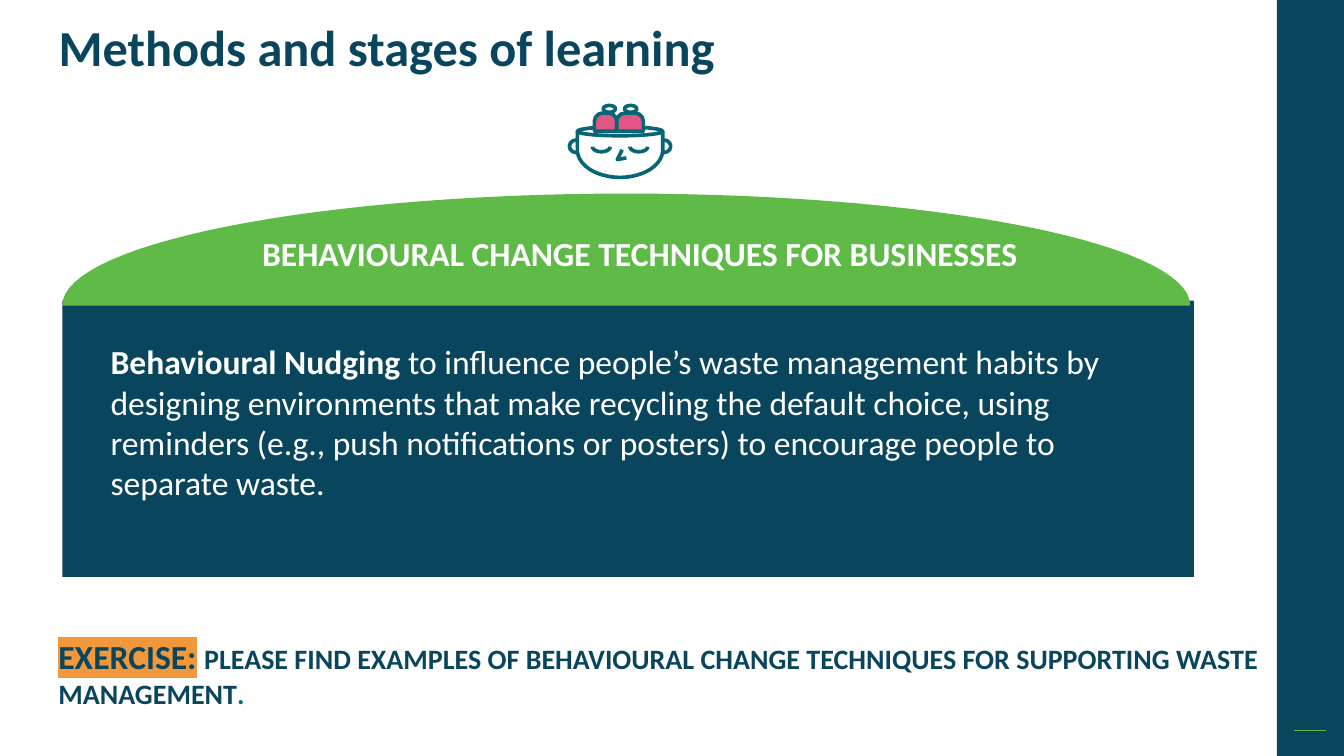
import math

from lxml import etree
from pptx import Presentation
from pptx.dml.color import RGBColor
from pptx.enum import shapes, text
from pptx.oxml import ns
from pptx.util import Pt

COLORS = {"navy": "09465E", "green": "60BA47", "white": "FFFFFF", "pink": "E25684",
          "teal": "086575", "orange": "F1983D", "stop": "086D6E"}
FONT = "Calibri"
SHAPE = shapes.MSO_SHAPE


def rgb(name):
    return RGBColor.from_string(COLORS[name])


def paint(sp, fill=None, line=None, width=2.6):
    sp.shadow.inherit = False
    if fill:
        sp.fill.solid()
        sp.fill.fore_color.rgb = rgb(fill)
    else:
        sp.fill.background()
    if line:
        sp.line.color.rgb = rgb(line)
        sp.line.width = Pt(width)
    else:
        sp.line.fill.background()
    return sp


def add_preset(s, kind, box, fill=None, line=None):
    return paint(s.shapes.add_shape(kind, *map(Pt, box)), fill, line)


def add_outline(s, points, fill=None, line=None, close=True):
    points = [(Pt(x), Pt(y)) for x, y in points]
    builder = s.shapes.build_freeform(*points[0])
    builder.add_line_segments(points[1:], close=close)
    return paint(builder.convert_to_shape(), fill, line)


def half_ellipse(cx, cy, rx, ry, steps=60):
    """Points from left to right; a positive ry bulges upwards."""
    angles = [math.pi * (1 - i / steps) for i in range(steps + 1)]
    return [(cx + rx * math.cos(a), cy - ry * math.sin(a)) for a in angles]


def add_run(p, words, size, color, bold=True):
    r = p.add_run()
    r.text = words
    r.font.size, r.font.bold, r.font.name = Pt(size), bold, FONT
    r.font.color.rgb = rgb(color)
    return r


def highlight(r, color):
    fill = r.font._element.find(ns.qn("a:solidFill"))
    mark = etree.Element(ns.qn("a:highlight"))
    etree.SubElement(mark, ns.qn("a:srgbClr"), val=COLORS[color])
    fill.addnext(mark)


def add_text(s, box):
    tf = s.shapes.add_textbox(*map(Pt, box)).text_frame
    tf.word_wrap = True
    return tf.paragraphs[0]


def add_sidebar(s, box):
    x, y, w, h = box
    add_preset(s, SHAPE.RECTANGLE, box, "navy")
    rule_y = Pt(y + h - 18)
    rule = s.shapes.add_connector(shapes.MSO_CONNECTOR.STRAIGHT,
                                  Pt(x + 12.5), rule_y, Pt(x + w - 12.5), rule_y)
    rule.line.color.rgb = rgb("green")
    rule.line.width = Pt(1)
    etree.SubElement(rule._element.spPr, ns.qn("a:effectLst"))


def add_title(s, box):
    sp = s.shapes.title
    sp.left, sp.top, sp.width, sp.height = map(Pt, box)
    tf = sp.text_frame
    tf.word_wrap = True
    tf.auto_size = text.MSO_AUTO_SIZE.NONE
    tf.vertical_anchor = text.MSO_ANCHOR.TOP
    p = tf.paragraphs[0]
    p.alignment = text.PP_ALIGN.LEFT
    p.line_spacing = 0.9
    p.space_before = Pt(0)
    add_run(p, "Methods and stages of learning", 36, "navy")


def add_technique_panel(s, box):
    x, y, w, h = box
    dome_h, seam = 80, 80 - 3.5
    add_preset(s, SHAPE.RECTANGLE, (x, y + seam, w, h - seam), "navy")
    radius = w / 2 - 1.3
    add_outline(s, half_ellipse(x + radius, y + dome_h, radius, dome_h), "green")

    p = add_text(s, (x + 112.5, y + 24.5, 600, 36))
    p.alignment = text.PP_ALIGN.CENTER
    add_run(p, "BEHAVIOURAL CHANGE TECHNIQUES FOR BUSINESSES", 24, "white")

    sp = add_preset(s, SHAPE.RECTANGLE, (x + 27.4, y + 102, 770, 143.5), "navy")
    tf = sp.text_frame
    tf.word_wrap = True
    tf.vertical_anchor = text.MSO_ANCHOR.TOP
    p = tf.paragraphs[0]
    p.alignment = text.PP_ALIGN.LEFT
    add_run(p, "Behavioural Nudging", 24, "white")
    add_run(p, " to influence people’s waste management habits by designing environments "
               "that make recycling the default choice, using reminders (e.g., push "
               "notifications or posters) to encourage people to separate waste.",
            24, "white", bold=False)


def add_open_mind_icon(s, box):
    x, y, w, h = box
    cx = x + w / 2
    for ear_x in (x + 1.3, x + w - 11.3):
        add_preset(s, SHAPE.OVAL, (ear_x, y + 26, 10, 9), "white", "teal")
    jaw = half_ellipse(cx, y + 33, 30.5, 33 - h + 1.3)
    rim_y = y + 19.8
    add_outline(s, [(cx - 30.5, rim_y), *jaw, (cx + 30.5, rim_y)], "white", "teal")
    add_preset(s, SHAPE.OVAL, (cx - 30.5, rim_y - 3.2, 61, 6.4), "white", "teal")
    for lobe_x, lobe_w, knob_x in ((-18.3, 16, -7.6), (-2.3, 19, 7.6)):
        add_preset(s, SHAPE.OVAL, (cx + knob_x - 4.4, y + 1.3, 8.8, 5), "white", "teal")
        lobe = add_preset(s, SHAPE.ROUND_2_SAME_RECTANGLE,
                          (cx + lobe_x, y + 6.8, lobe_w, 13), "pink", "teal")
        lobe.adjustments[0] = 0.45
    for eye_x in (-13.4, 13.4):
        add_outline(s, half_ellipse(cx + eye_x, y + 30.8, 6.3, -3.6),
                    line="teal", close=False)
    nose = [(1.5, 33), (-2, 40), (4.5, 38.8)]
    add_outline(s, [(cx + dx, y + dy) for dx, dy in nose], line="teal", close=False)


def add_exercise(s, box):
    p = add_text(s, box)
    highlight(add_run(p, "EXERCISE:", 24, "navy"), "orange")
    add_run(p, " ", 24, "navy")
    add_run(p, "PLEASE FIND EXAMPLES OF BEHAVIOURAL CHANGE TECHNIQUES FOR SUPPORTING "
               "WASTE MANAGEMENT", 20, "navy")
    add_run(p, ".", 20, "stop")


def main():
    prs = Presentation()
    prs.slide_width, prs.slide_height = Pt(960), Pt(540)
    s = prs.slides.add_slide(prs.slide_layouts[5])
    add_sidebar(s, (912, 0, 48, 540))
    add_title(s, (34.6, 13, 587, 40))
    add_technique_panel(s, (44.5, 138.3, 808.3, 273.8))
    add_open_mind_icon(s, (405.4, 74, 75, 54))
    add_exercise(s, (34.6, 450.6, 887, 60))
    prs.save("out.pptx")


if __name__ == "__main__":
    main()
